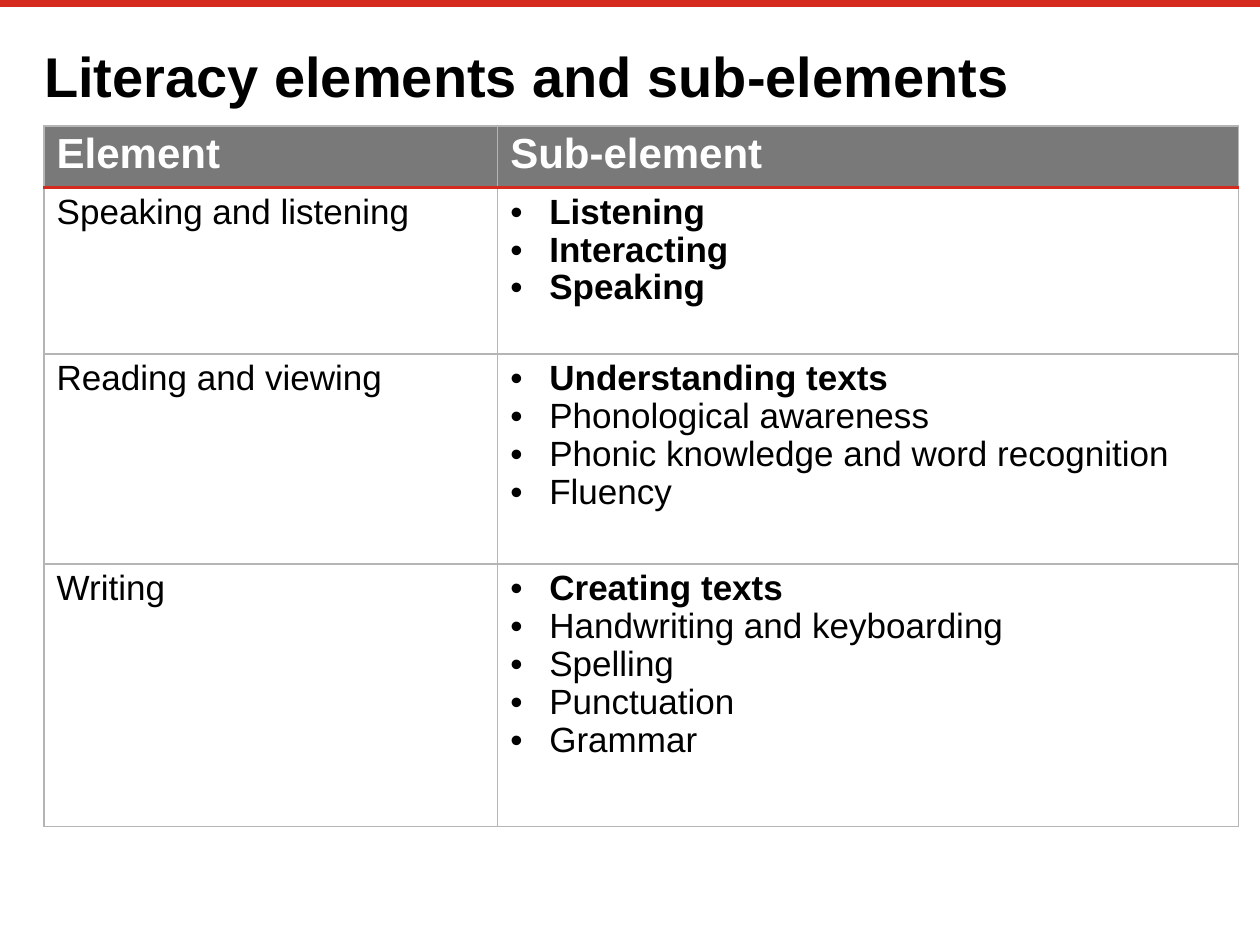
from dataclasses import dataclass

from lxml import etree
from pptx import Presentation
from pptx.dml.color import RGBColor
from pptx.enum.shapes import MSO_CONNECTOR
from pptx.oxml.ns import qn
from pptx.slide import Slide
from pptx.table import _Cell
from pptx.text.text import _Paragraph
from pptx.util import Inches, Pt

STRAIGHT = MSO_CONNECTOR.STRAIGHT


@dataclass(frozen=True)
class Theme:
    font: str = "Arial"
    red: str = "D52B1E"
    black: str = "000000"
    white: str = "FFFFFF"
    header_fill: str = "797979"
    grid: str = "B5B5B5"
    title_size: float = 32
    header_size: float = 24
    body_size: float = 20
    bar_width: float = 4.2
    grid_width: float = 1
    rule_width: float = 1.5
    line_spacing: float = 0.97


@dataclass(frozen=True)
class Element:
    name: str
    height: float
    main: tuple[str, ...]
    other: tuple[str, ...] = ()


THEME = Theme()
HEADERS = ("Element", "Sub-element")
HEADER_HEIGHT = 0.47
COLUMN_WIDTHS = (3.6, 5.88)
ELEMENTS = (
    Element("Speaking and listening", 1.32, ("Listening", "Interacting", "Speaking")),
    Element("Reading and viewing", 1.67, ("Understanding texts",),
            ("Phonological awareness", "Phonic knowledge and word recognition", "Fluency")),
    Element("Writing", 2.08, ("Creating texts",),
            ("Handwriting and keyboarding", "Spelling", "Punctuation", "Grammar")),
)


def add_text(paragraph: _Paragraph, text: str, size: float, color: str, bold: bool) -> None:
    run = paragraph.add_run()
    run.text = text
    run.font.name = THEME.font
    run.font.size = Pt(size)
    run.font.bold = bold
    run.font.color.rgb = RGBColor.from_string(color)


def add_bullet(paragraph: _Paragraph) -> None:
    properties = paragraph._p.get_or_add_pPr()
    properties.set("marL", str(Inches(0.31)))
    properties.set("indent", str(Inches(-0.31)))
    etree.SubElement(properties, qn("a:buFont"), typeface=THEME.font)
    etree.SubElement(properties, qn("a:buChar"), char="•")


def set_borders(cell: _Cell, red_side: str) -> None:
    properties = cell._tc.get_or_add_tcPr()
    for side in ("L", "R", "T", "B"):
        is_red = side == red_side
        width = THEME.rule_width if is_red else THEME.grid_width
        line = etree.SubElement(properties, qn(f"a:ln{side}"), w=str(Pt(width)))
        fill = etree.SubElement(line, qn("a:solidFill"))
        etree.SubElement(fill, qn("a:srgbClr"), val=THEME.red if is_red else THEME.grid)


def fill_cell(cell: _Cell, lines: list[tuple[str, bool]], size: float, color: str,
              bulleted: bool = False) -> None:
    frame = cell.text_frame
    for index, (text, bold) in enumerate(lines):
        paragraph = frame.add_paragraph() if index else frame.paragraphs[0]
        if bulleted:
            add_bullet(paragraph)
        paragraph.line_spacing = THEME.line_spacing
        add_text(paragraph, text, size, color, bold)


def add_top_bar(slide: Slide) -> None:
    bar = slide.shapes.add_connector(STRAIGHT, Inches(0), Inches(0.03), Inches(10), Inches(0.03))
    bar.line.color.rgb = RGBColor.from_string(THEME.red)
    bar.line.width = Pt(THEME.bar_width)
    etree.SubElement(bar._element.spPr, qn("a:effectLst"))


def add_title(slide: Slide) -> None:
    box = slide.shapes.add_textbox(Inches(0.35), Inches(0.28), Inches(9.29), Inches(0.48))
    frame = box.text_frame
    frame.word_wrap = True
    frame.margin_left = frame.margin_right = frame.margin_bottom = 0
    frame.margin_top = Inches(0.05)
    add_text(frame.paragraphs[0], "Literacy elements and sub-elements",
             THEME.title_size, THEME.black, True)


def add_element_table(slide: Slide) -> None:
    heights = [HEADER_HEIGHT, *(element.height for element in ELEMENTS)]
    table = slide.shapes.add_table(
        len(heights), len(COLUMN_WIDTHS), Inches(0.35), Inches(1),
        Inches(sum(COLUMN_WIDTHS)), Inches(sum(heights))).table
    table.horz_banding = False
    for column, width in zip(table.columns, COLUMN_WIDTHS):
        column.width = Inches(width)
    for row_index, height in enumerate(heights):
        table.rows[row_index].height = Inches(height)
        red_side = {0: "B", 1: "T"}.get(row_index, "")
        for cell in table.rows[row_index].cells:
            set_borders(cell, red_side)
            if row_index:
                cell.fill.background()
            else:
                cell.fill.solid()
                cell.fill.fore_color.rgb = RGBColor.from_string(THEME.header_fill)
    for column_index, header in enumerate(HEADERS):
        fill_cell(table.cell(0, column_index), [(header, True)], THEME.header_size, THEME.white)
    for row_index, element in enumerate(ELEMENTS, start=1):
        fill_cell(table.cell(row_index, 0), [(element.name, False)],
                  THEME.body_size, THEME.black)
        lines = [(text, True) for text in element.main]
        lines += [(text, False) for text in element.other]
        fill_cell(table.cell(row_index, 1), lines, THEME.body_size, THEME.black, bulleted=True)


def main() -> None:
    presentation = Presentation()
    presentation.slide_width = Inches(10)
    presentation.slide_height = Inches(7.5)
    slide = presentation.slides.add_slide(presentation.slide_layouts[6])
    add_top_bar(slide)
    add_title(slide)
    add_element_table(slide)
    presentation.save("out.pptx")


if __name__ == "__main__":
    main()
